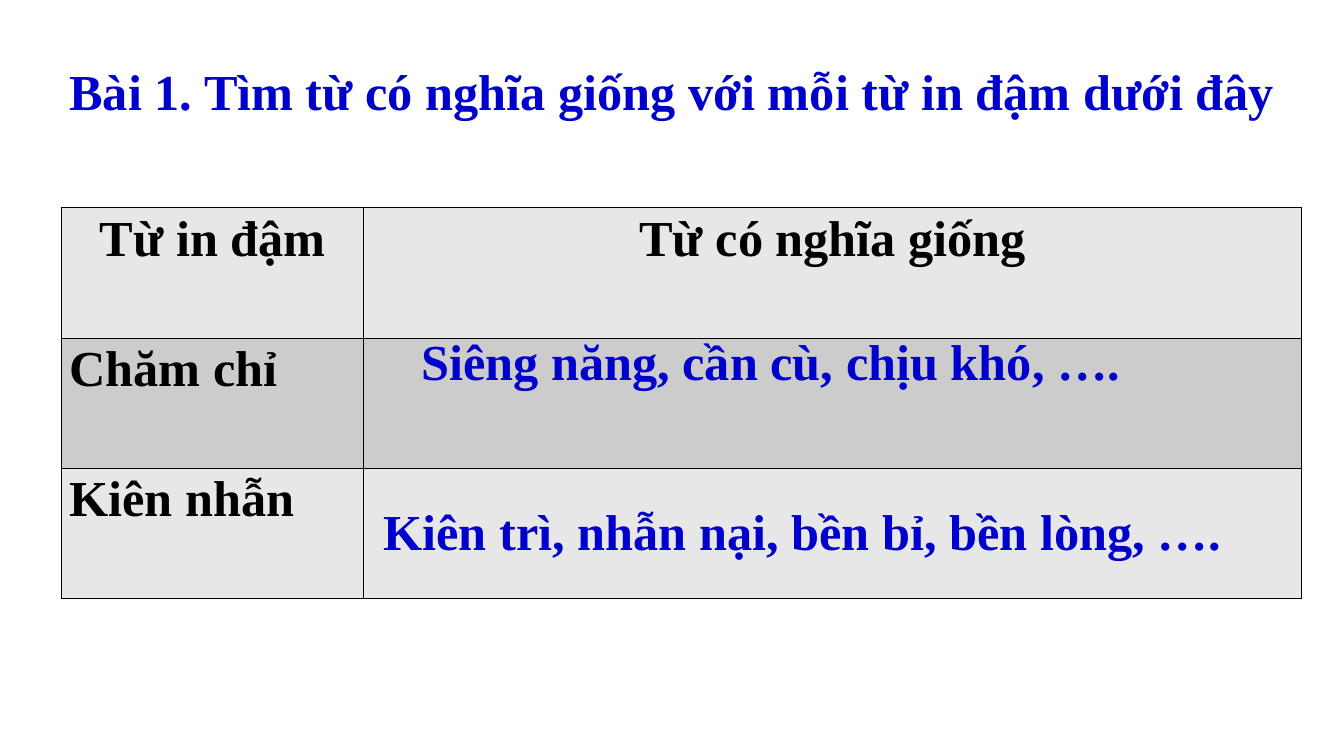
from dataclasses import dataclass

from lxml.etree import SubElement
from pptx import Presentation
from pptx.dml.color import RGBColor
from pptx.enum.text import MSO_ANCHOR, MSO_AUTO_SIZE, PP_ALIGN
from pptx.oxml.ns import qn
from pptx.util import Cm, Pt


@dataclass(frozen=True)
class Theme:
    font: str = "Times New Roman"
    size: int = 48
    accent: str = "0000CC"
    text: str = "000000"
    border: str = "000000"
    light_band: str = "E7E7E7"
    dark_band: str = "CCCCCC"


class LessonSlide:
    def __init__(self, presentation, theme):
        self.theme = theme
        title_only = presentation.slide_layouts[5]
        self.slide = presentation.slides.add_slide(title_only)

    def set_text(self, text_frame, text, color, alignment):
        text_frame.text = text
        paragraph = text_frame.paragraphs[0]
        paragraph.alignment = alignment
        paragraph.font.name = self.theme.font
        paragraph.font.size = Pt(self.theme.size)
        paragraph.font.bold = True
        paragraph.font.color.rgb = RGBColor.from_string(color)

    def fill_box(self, shape, text):
        text_frame = shape.text_frame
        text_frame.word_wrap = True
        text_frame.auto_size = MSO_AUTO_SIZE.SHAPE_TO_FIT_TEXT
        text_frame.vertical_anchor = MSO_ANCHOR.TOP
        self.set_text(text_frame, text, self.theme.accent, PP_ALIGN.JUSTIFY)

    def add_title(self, text, left, top, width, height):
        title = self.slide.shapes.title
        title.left, title.top = Cm(left), Cm(top)
        title.width, title.height = Cm(width), Cm(height)
        self.fill_box(title, text)

    def add_answer(self, text, left, top, width, height):
        box = self.slide.shapes.add_textbox(Cm(left), Cm(top), Cm(width), Cm(height))
        self.fill_box(box, text)

    def add_border(self, cell):
        properties = cell._tc.get_or_add_tcPr()
        for index, side in enumerate(("a:lnL", "a:lnR", "a:lnT", "a:lnB")):
            line = properties.makeelement(qn(side), {"w": str(Pt(1))})
            fill = SubElement(line, qn("a:solidFill"))
            SubElement(fill, qn("a:srgbClr"), val=self.theme.border)
            properties.insert(index, line)

    def add_word_table(self, rows, left, top, column_widths, row_height):
        """Add a banded table whose header row is centred."""
        frame = self.slide.shapes.add_table(
            len(rows), len(column_widths), Cm(left), Cm(top),
            Cm(sum(column_widths)), Cm(row_height * len(rows)))
        table = frame.table
        for column, width in zip(table.columns, column_widths):
            column.width = Cm(width)
        bands = (self.theme.light_band, self.theme.dark_band)
        for row_index, texts in enumerate(rows):
            table.rows[row_index].height = Cm(row_height)
            alignment = PP_ALIGN.LEFT if row_index else PP_ALIGN.CENTER
            for column_index, text in enumerate(texts):
                cell = table.cell(row_index, column_index)
                cell.fill.solid()
                cell.fill.fore_color.rgb = RGBColor.from_string(bands[row_index % 2])
                self.add_border(cell)
                self.set_text(cell.text_frame, text, self.theme.text, alignment)


def main():
    presentation = Presentation()
    presentation.slide_width = Cm(45.21)
    presentation.slide_height = Cm(25.4)

    lesson = LessonSlide(presentation, Theme())
    lesson.add_title("Bài 1. Tìm từ có nghĩa giống với mỗi từ in đậm dưới đây",
                     2.08, 1.9, 41.28, 2.31)
    lesson.add_word_table(
        [("Từ in đậm", "Từ có nghĩa giống"), ("Chăm chỉ", ""), ("Kiên nhẫn", "")],
        left=2.08, top=6.99, column_widths=(10.16, 31.55), row_height=4.38)
    lesson.add_answer("Siêng năng, cần cù, chịu khó, ….", 13.92, 11, 25.6, 2.31)
    lesson.add_answer("Kiên trì, nhẫn nại, bền bỉ, bền lòng, ….", 12.65, 16.71, 30.05, 2.31)
    presentation.save("out.pptx")


if __name__ == "__main__":
    main()
